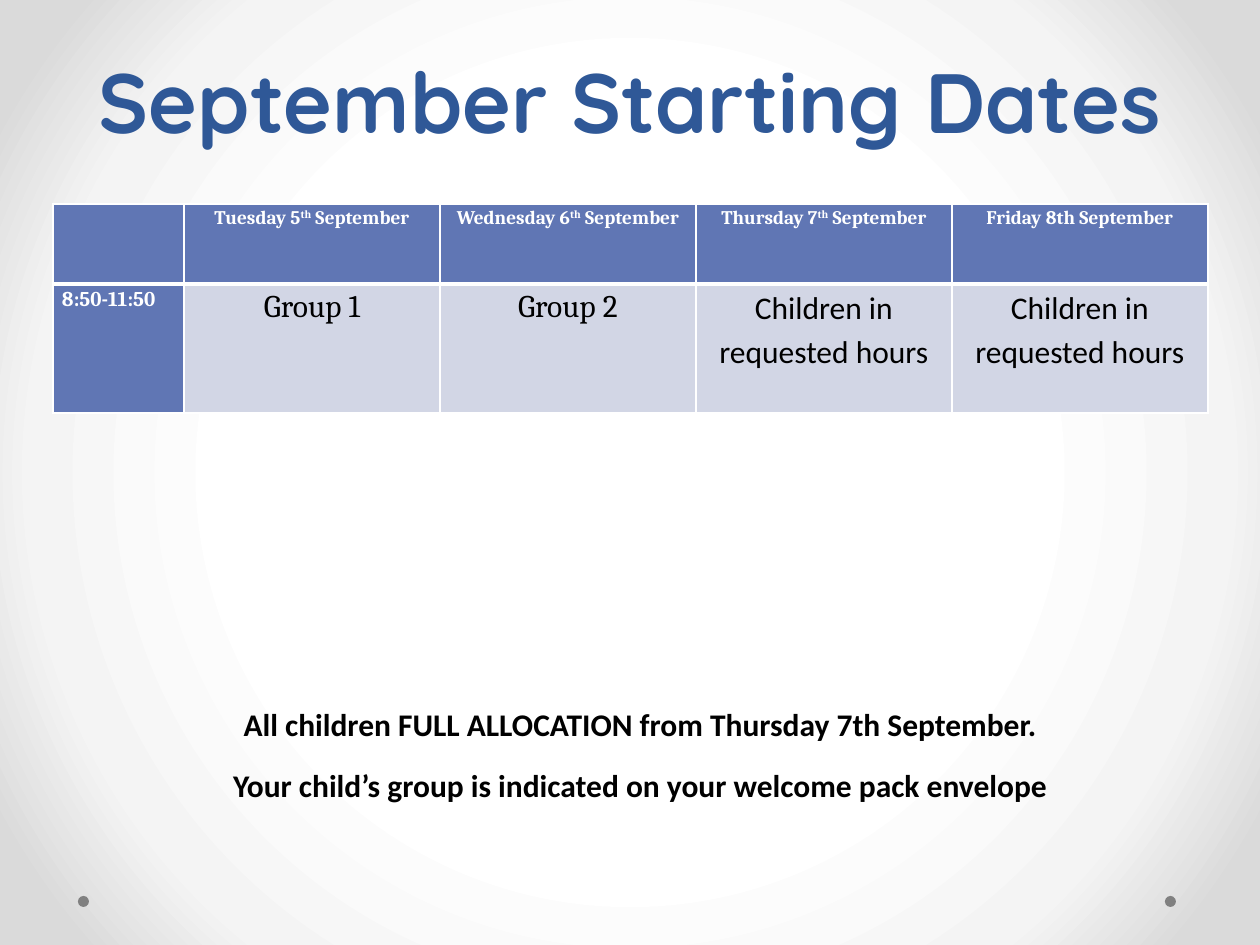
from lxml import etree
from pptx import Presentation
from pptx.dml.color import RGBColor
from pptx.enum.shapes import MSO_SHAPE
from pptx.enum.text import MSO_ANCHOR, MSO_AUTO_SIZE, PP_ALIGN
from pptx.oxml import parse_xml
from pptx.oxml.ns import nsdecls, qn
from pptx.util import Pt

PX = 914400 // 126
CENTER, LEFT = PP_ALIGN.CENTER, PP_ALIGN.LEFT
BLUE, PALE, WHITE, BLACK = "6076B4", "D2D6E5", "FFFFFF", "000000"


def color(value):
    return RGBColor.from_string(value)


def add_run(paragraph, text, name, size, bold, value):
    run = paragraph.add_run()
    run.text = text
    font_format = {"name": name, "size": Pt(size), "bold": bold}
    for attribute, setting in font_format.items():
        setattr(run.font, attribute, setting)
    run.font.color.rgb = color(value)
    return run


presentation = Presentation()
presentation.slide_width = 1260 * PX
presentation.slide_height = 945 * PX
slide = presentation.slides.add_slide(presentation.slide_layouts[5])

# Radial background
slide.background.fill.solid()
solid_fill = slide.element.find(".//" + qn("p:bgPr")).find(qn("a:solidFill"))
stops = "".join(
    f'<a:gs pos="{percent * 1000}"><a:srgbClr val="{value}"/></a:gs>'
    for percent, value in [(50, WHITE), (76, "F4F4F4"), (92, "DADADA")]
)
gradient = parse_xml(
    f'<a:gradFill {nsdecls("a")} rotWithShape="1"><a:gsLst>{stops}</a:gsLst>'
    '<a:path path="circle"><a:fillToRect l="50000" t="50000" r="50000" b="50000"/>'
    "</a:path></a:gradFill>"
)
solid_fill.getparent().replace(solid_fill, gradient)

# Corner dots
for left in (78, 1165):
    dot = slide.shapes.add_shape(MSO_SHAPE.OVAL, left * PX, 896 * PX, 11 * PX, 11 * PX)
    dot.shadow.inherit = False
    dot.fill.solid()
    dot.fill.fore_color.rgb = color("808080")
    dot.line.fill.background()

# Title
title = slide.shapes.title
title_box = {"left": 63, "top": 21, "width": 1134, "height": 136}
for attribute, length in title_box.items():
    setattr(title, attribute, length * PX)
title.text_frame.vertical_anchor = MSO_ANCHOR.BOTTOM
title.text_frame.auto_size = MSO_AUTO_SIZE.NONE
paragraph = title.text_frame.paragraphs[0]
paragraph.alignment = CENTER
paragraph.line_spacing = Pt(58)
add_run(paragraph, "September Starting Dates", "Quicksand", 48, True, "2F5897")

# Notes under the table
notes = slide.shapes.add_textbox(21 * PX, 693 * PX, 1239 * PX, 118 * PX).text_frame
notes.word_wrap = True
notes.auto_size = MSO_AUTO_SIZE.SHAPE_TO_FIT_TEXT
note_lines = [
    "All children FULL ALLOCATION from Thursday 7th September.",
    "Your child’s group is indicated on your welcome pack envelope",
]
for index, line in enumerate(note_lines):
    paragraph = notes.add_paragraph() if index else notes.paragraphs[0]
    paragraph.alignment = CENTER
    paragraph.line_spacing = 1.15
    paragraph.space_after = Pt(10)
    add_run(paragraph, line, "Calibri", 18, True, BLACK)

# Timetable: each cell is a list of run texts, "th" being raised
rows = [
    [
        [],
        ["Tuesday 5", "th", " September"],
        ["Wednesday 6", "th", " September"],
        ["Thursday 7", "th", " September"],
        ["Friday 8th September"],
    ],
    [
        ["8:50-11:50"],
        ["Group 1"],
        ["Group 2"],
        ["Children in requested hours"],
        ["Children in requested hours"],
    ],
]
table = slide.shapes.add_table(2, 5, 53 * PX, 204 * PX, 1155 * PX, 209 * PX).table
for column, width in zip(table.columns, [131] + [256] * 4):
    column.width = width * PX
for row, height in zip(table.rows, [80, 129]):
    row.height = height * PX

for row_index, row in enumerate(rows):
    for column_index, texts in enumerate(row):
        cell = table.cell(row_index, column_index)
        is_body = row_index > 0 and column_index > 0
        margins = {"margin_left": 9, "margin_right": 9, "margin_top": 0, "margin_bottom": 0}
        for attribute, length in margins.items():
            setattr(cell, attribute, length * PX)
        cell.fill.solid()
        cell.fill.fore_color.rgb = color(PALE if is_body else BLUE)

        properties = cell._tc.get_or_add_tcPr()
        for position, side in enumerate(["lnL", "lnR", "lnT", "lnB"]):
            is_divider = (row_index, side) in [(0, "lnB"), (1, "lnT")]
            line = etree.Element(qn("a:" + side), w=str(Pt(3 if is_divider else 1)))
            line_fill = etree.SubElement(line, qn("a:solidFill"))
            etree.SubElement(line_fill, qn("a:srgbClr"), val=WHITE)
            properties.insert(position, line)

        paragraph = cell.text_frame.paragraphs[0]
        paragraph.alignment = CENTER if column_index else LEFT
        paragraph.line_spacing = 1.15
        name = "Calibri" if is_body and column_index > 2 else "Cambria"
        size = 18 if is_body else 12 if row_index else 11
        for text in texts:
            run = add_run(paragraph, text, name, size, not is_body, BLACK if is_body else WHITE)
            if text == "th":
                run.font._element.set("baseline", "30000")

presentation.save("out.pptx")
